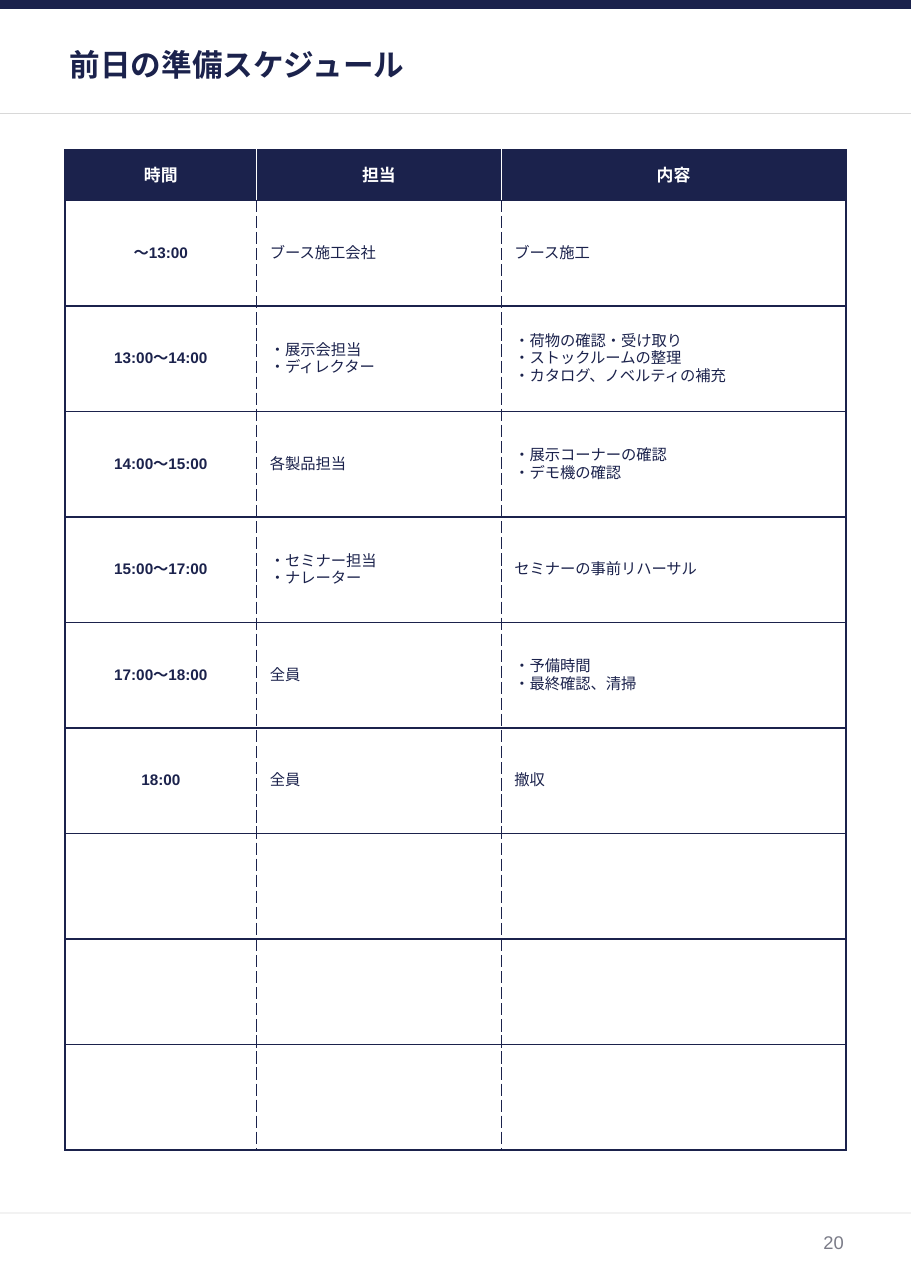
from lxml import etree
from pptx import Presentation
from pptx.dml.color import RGBColor
from pptx.enum.lang import MSO_LANGUAGE_ID as Language
from pptx.enum.shapes import MSO_CONNECTOR as Connector, MSO_SHAPE as Shape
from pptx.enum.text import MSO_ANCHOR as Anchor, PP_ALIGN as Align
from pptx.oxml.ns import qn
from pptx.util import Inches, Pt

# Content
TITLE = "前日の準備スケジュール"
PAGE_NUMBER = "20"
HEADERS = ("時間", "担当", "内容")
SCHEDULE = [
    ("～13:00", ["ブース施工会社"], ["ブース施工"]),
    ("13:00～14:00", ["・展示会担当", "・ディレクター"],
     ["・荷物の確認・受け取り", "・ストックルームの整理", "・カタログ、ノベルティの補充"]),
    ("14:00～15:00", ["各製品担当"], ["・展示コーナーの確認", "・デモ機の確認"]),
    ("15:00～17:00", ["・セミナー担当", "・ナレーター"], ["セミナーの事前リハーサル"]),
    ("17:00～18:00", ["全員"], ["・予備時間", "・最終確認、清掃"]),
    ("18:00", ["全員"], ["撤収"]),
]
EMPTY_ROWS = 3

# Style and layout, in inches
NAVY, WHITE, GREY = "1B224C", "FFFFFF", "7A7B87"
FONT = "Arial"
PAGE_WIDTH, PAGE_HEIGHT = 8.27, 11.69
MARGIN, TABLE_TOP = 0.59, 1.36
TABLE_WIDTH, TABLE_HEIGHT, HEADER_HEIGHT = 7.09, 9.08, 0.46
COLUMN_WIDTHS = (1.74, 2.22, 3.13)
CELL_INSET, BOX_INSET = 0.12, 0.04
RULES = [(11.01, "F2F2F2"), (1.03, "D8D8D8")]


def color(value):
    return RGBColor.from_string(value)


def write_text(frame, lines, size=10, fill=NAVY, bold=False, align=Align.LEFT):
    """Write one paragraph for each line."""
    for index, line in enumerate(lines):
        paragraph = frame.paragraphs[0] if index == 0 else frame.add_paragraph()
        paragraph.alignment = align
        run = paragraph.add_run()
        run.text = line
        font = run.font
        font.size, font.bold, font.name = Pt(size), bold, FONT
        font.color.rgb = color(fill)
        font.language_id = Language.JAPANESE
        latin = run._r.rPr.find(qn("a:latin"))
        latin.addnext(latin.makeelement(qn("a:ea"), typeface=FONT))


def add_text_box(left, top, width, height, text, **text_format):
    box = slide.shapes.add_textbox(Inches(left), Inches(top), Inches(width), Inches(height))
    frame = box.text_frame
    frame.word_wrap = True
    frame.vertical_anchor = Anchor.MIDDLE
    frame.margin_left = frame.margin_right = Inches(BOX_INSET)
    frame.margin_top = frame.margin_bottom = Inches(BOX_INSET)
    write_text(frame, [text], **text_format)


def add_rule(top, line_color):
    rule = slide.shapes.add_connector(
        Connector.STRAIGHT, 0, Inches(top), Inches(PAGE_WIDTH), Inches(top))
    rule.line.color.rgb = color(line_color)
    rule.line.width = Pt(0.75)
    etree.SubElement(rule._element.spPr, qn("a:effectLst"))


def add_border(cell, side, line_color, width, dash):
    properties = cell._tc.get_or_add_tcPr()
    line = etree.SubElement(properties, qn("a:ln" + side), w=str(Pt(width)))
    fill = etree.SubElement(line, qn("a:solidFill"))
    etree.SubElement(fill, qn("a:srgbClr"), val=line_color)
    etree.SubElement(line, qn("a:prstDash"), val=dash)


def format_cell(cell, row, column):
    """Inner verticals are white in the header and dashed below it."""
    solid = (NAVY, 1, "solid")
    inner = (WHITE, 1, "solid") if row == 0 else (NAVY, 0.75, "dash")
    last = len(HEADERS) - 1
    add_border(cell, "L", *(solid if column == 0 else inner))
    add_border(cell, "R", *(solid if column == last else inner))
    add_border(cell, "T", *solid)
    add_border(cell, "B", *solid)
    if row == 0:
        cell.fill.solid()
        cell.fill.fore_color.rgb = color(NAVY)
    else:
        cell.fill.background()
    cell.vertical_anchor = Anchor.MIDDLE
    cell.margin_left = cell.margin_right = Inches(CELL_INSET)
    cell.margin_top = cell.margin_bottom = Inches(CELL_INSET)


presentation = Presentation()
presentation.slide_width = Inches(PAGE_WIDTH)
presentation.slide_height = Inches(PAGE_HEIGHT)
slide = presentation.slides.add_slide(presentation.slide_layouts[6])

# Top band and rules
band = slide.shapes.add_shape(Shape.RECTANGLE, 0, 0, Inches(PAGE_WIDTH), Inches(0.08))
band.shadow.inherit = False
band.fill.solid()
band.fill.fore_color.rgb = color(NAVY)
band.line.fill.background()
for rule_top, rule_color in RULES:
    add_rule(rule_top, rule_color)

# Title and page number
add_text_box(MARGIN, 0.35, TABLE_WIDTH, 0.47, TITLE, size=20, bold=True)
add_text_box(5.84, 11.12, 1.86, 0.31, PAGE_NUMBER, size=12, fill=GREY, align=Align.RIGHT)

# Schedule table
body_rows = len(SCHEDULE) + EMPTY_ROWS
table = slide.shapes.add_table(
    body_rows + 1, len(HEADERS), Inches(MARGIN), Inches(TABLE_TOP),
    Inches(TABLE_WIDTH), Inches(TABLE_HEIGHT)).table
table.horz_banding = False
for table_column, column_width in zip(table.columns, COLUMN_WIDTHS):
    table_column.width = Inches(column_width)
body_height = (TABLE_HEIGHT - HEADER_HEIGHT) / body_rows
for row, table_row in enumerate(table.rows):
    table_row.height = Inches(body_height if row else HEADER_HEIGHT)
    for column, cell in enumerate(table_row.cells):
        format_cell(cell, row, column)

for column, header in enumerate(HEADERS):
    write_text(table.cell(0, column).text_frame, [header],
               size=11, fill=WHITE, bold=True, align=Align.CENTER)
for row, (time, staff, tasks) in enumerate(SCHEDULE, start=1):
    write_text(table.cell(row, 0).text_frame, [time], bold=True, align=Align.CENTER)
    write_text(table.cell(row, 1).text_frame, staff)
    write_text(table.cell(row, 2).text_frame, tasks)

presentation.save("out.pptx")
